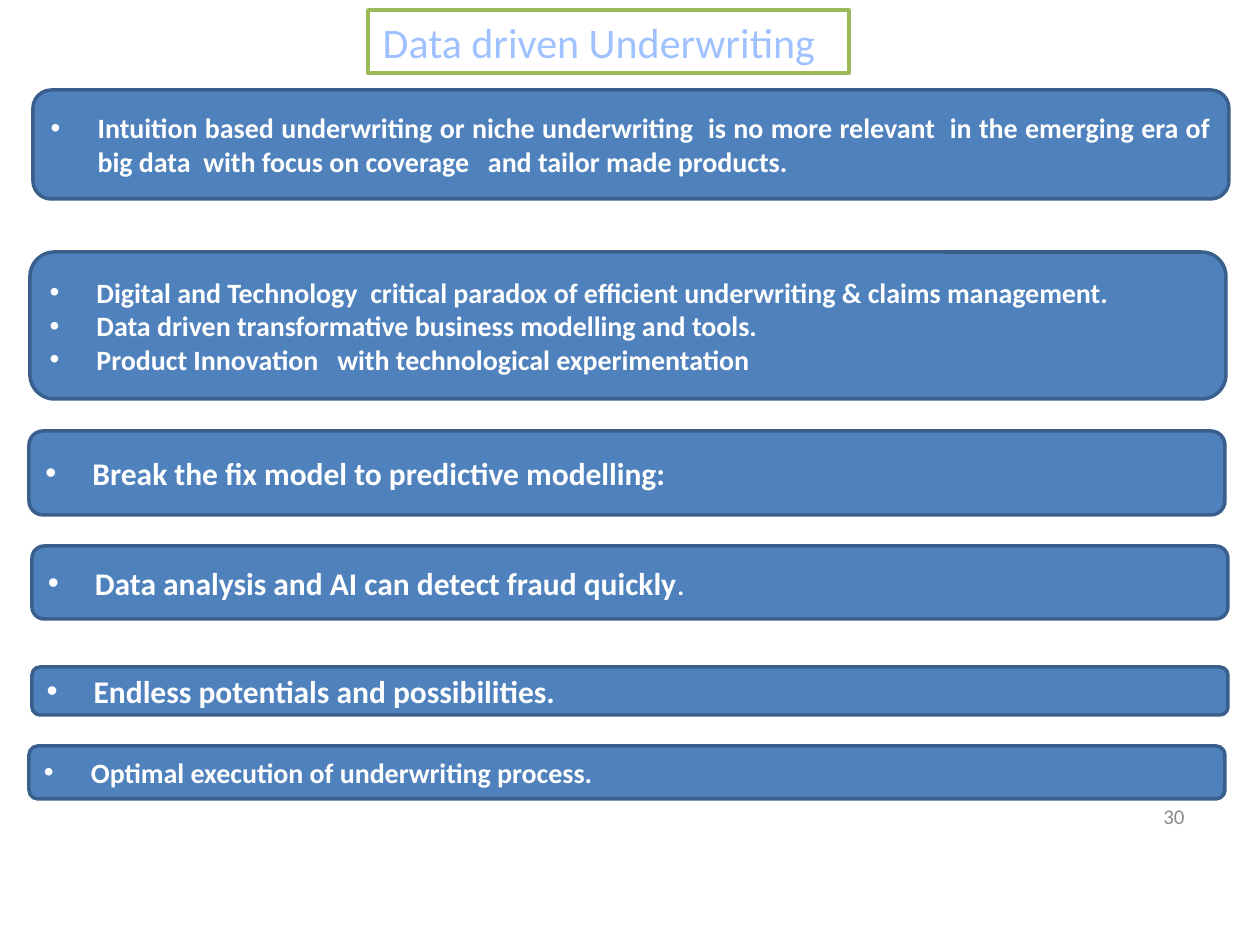
from lxml.etree import SubElement
from pptx import Presentation
from pptx.dml.color import RGBColor
from pptx.enum.shapes import MSO_SHAPE
from pptx.enum.text import MSO_ANCHOR, PP_ALIGN
from pptx.oxml.ns import qn
from pptx.util import Pt

PX = 914400 / 126
FONT = "Calibri"
WHITE = RGBColor(0xFF, 0xFF, 0xFF)
BLUE = RGBColor(0x4F, 0x81, 0xBD)
NAVY = RGBColor(0x3A, 0x5F, 0x8C)
GREEN = RGBColor(0x9B, 0xBB, 0x59)
PALE_BLUE = RGBColor(0xA0, 0xC1, 0xFF)
GREY = RGBColor(0x8C, 0x8C, 0x8C)

BAR_WIDTH = 1196
INDENT = 47
LEFT, JUSTIFY = PP_ALIGN.LEFT, PP_ALIGN.JUSTIFY

# left, top, height, text size, alignment, bullets (each a list of runs; only the first is bold)
BARS = [
    (33, 90, 109, 16, JUSTIFY, [
        ["Intuition based underwriting or niche underwriting  is no more relevant  in the "
         "emerging era of big data  with focus on coverage   and tailor made products.  "]]),
    (30, 252, 147, 16, JUSTIFY, [
        ["Digital and Technology  critical paradox of efficient underwriting & claims management."],
        ["Data driven transformative business modelling and tools."],
        ["Product Innovation   with technological experimentation "]]),
    (29, 431, 84, 18, LEFT, [["Break the fix model to predictive modelling:"]]),
    (32, 546, 73, 18, JUSTIFY, [["Data analysis and AI can detect fraud quickly", ". "]]),
    (32, 667, 48, 18, JUSTIFY, [["Endless potentials and possibilities."]]),
    (29, 746, 53, 16, JUSTIFY, [["Optimal execution of underwriting process. "]]),
]


def px(n):
    return round(n * PX)


def style_run(r, size, color, bold=False):
    r.font.name = FONT
    r.font.size = Pt(size)
    r.font.bold = bold
    r.font.color.rgb = color


def add_box(slide, kind, box, fill, line):
    sp = slide.shapes.add_shape(kind, *map(px, box))
    sp.shadow.inherit = False
    sp.fill.solid()
    sp.fill.fore_color.rgb = fill
    sp.line.color.rgb = line
    sp.line.width = Pt(2)
    sp.text_frame.vertical_anchor = MSO_ANCHOR.MIDDLE
    return sp


def add_bullet(p):
    """Give the paragraph a round bullet with a hanging indent."""
    pPr = p._p.get_or_add_pPr()
    pPr.set("marL", str(px(INDENT)))
    pPr.set("indent", str(-px(INDENT)))
    SubElement(pPr, qn("a:buFont"), typeface="Arial")
    SubElement(pPr, qn("a:buChar"), char="•")


def add_title(slide, box):
    tf = add_box(slide, MSO_SHAPE.RECTANGLE, box, WHITE, GREEN).text_frame
    tf.word_wrap = False
    p = tf.paragraphs[0]
    p.text = "Data driven Underwriting  "
    p.alignment = PP_ALIGN.CENTER
    style_run(p.runs[0], 24, PALE_BLUE)


def add_bar(slide, box, size, align, bullets):
    tf = add_box(slide, MSO_SHAPE.ROUNDED_RECTANGLE, box, BLUE, NAVY).text_frame
    tf.word_wrap = True
    for i, texts in enumerate(bullets):
        p = tf.add_paragraph() if i else tf.paragraphs[0]
        p.alignment = align
        add_bullet(p)
        for j, text in enumerate(texts):
            r = p.add_run()
            r.text = text
            style_run(r, size, WHITE, bold=j == 0)


def add_page_number(slide, box):
    tf = slide.shapes.add_textbox(*map(px, box)).text_frame
    tf.word_wrap = True
    tf.vertical_anchor = MSO_ANCHOR.MIDDLE
    p = tf.paragraphs[0]
    p.text = "30"
    p.alignment = PP_ALIGN.RIGHT
    style_run(p.runs[0], 12, GREY)


def main():
    prs = Presentation()
    prs.slide_width, prs.slide_height = px(1260), px(945)
    slide = prs.slides.add_slide(prs.slide_layouts[6])
    add_page_number(slide, (903, 791, 294, 50))
    add_title(slide, (368, 10, 481, 63))
    for left, top, height, size, align, bullets in BARS:
        add_bar(slide, (left, top, BAR_WIDTH, height), size, align, bullets)
    prs.save("out.pptx")


if __name__ == "__main__":
    main()
